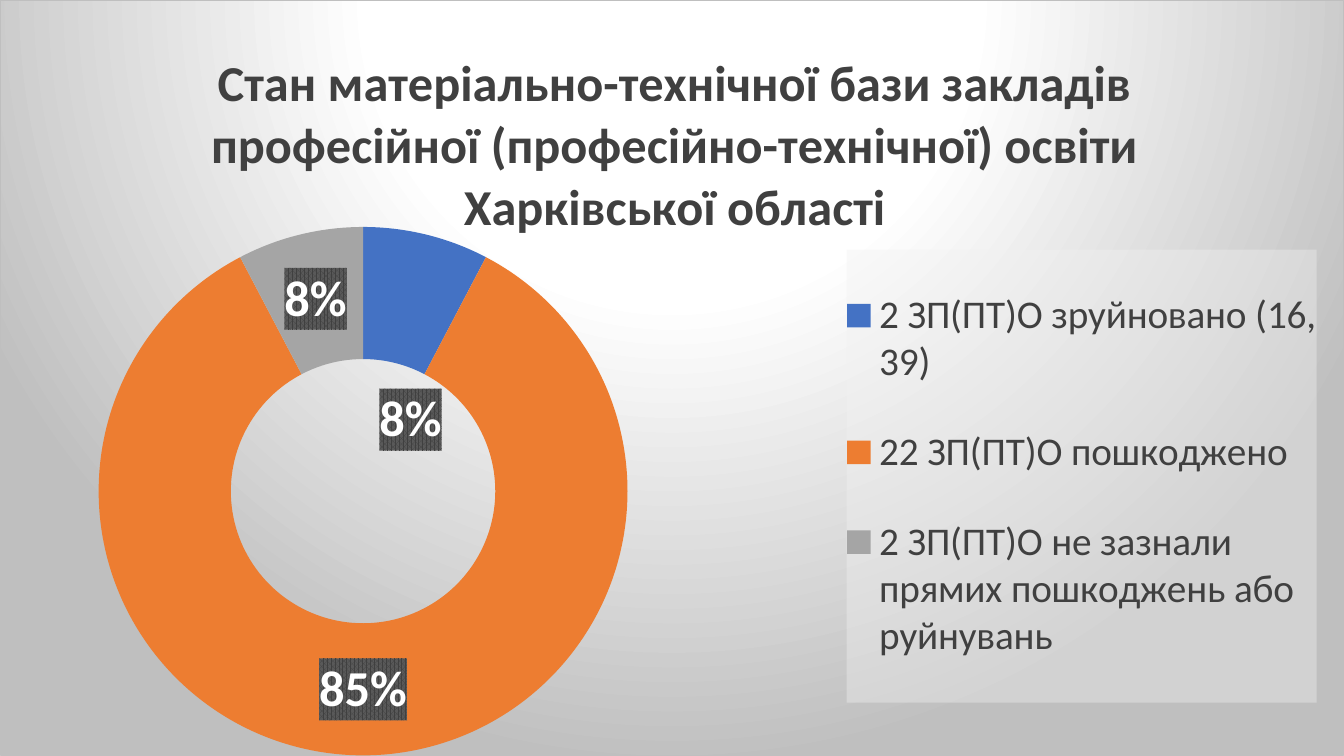
import copy
import pptx
import pptx.util
import pptx.chart.data
import pptx.dml.color
import pptx.enum.chart
import pptx.oxml
import pptx.oxml.ns

RGB = pptx.dml.color.RGBColor
DARK = RGB(0x40, 0x40, 0x40)
SLATE = RGB(0x59, 0x59, 0x59)
WHITE = RGB(0xFF, 0xFF, 0xFF)
PALE = RGB(0xF2, 0xF2, 0xF2)
GREY = RGB(0xBF, 0xBF, 0xBF)
BLUE = RGB(0x44, 0x72, 0xC4)
RUST = RGB(0xED, 0x7D, 0x31)
ASH = RGB(0xA5, 0xA5, 0xA5)

WIDE, HIGH = pptx.util.Inches(13.33), pptx.util.Inches(7.5)
HEAD = ("Стан матеріально-технічної бази закладів професійної "
        "(професійно-технічної) освіти Харківської області")
PARTS = [
    ("2 ЗП(ПТ)О зруйновано (16, 39)", 2, BLUE),
    ("22 ЗП(ПТ)О пошкоджено", 22, RUST),
    ("2 ЗП(ПТ)О не зазнали прямих пошкоджень або руйнувань", 2, ASH),
]


def node(tag, body):
    spaces = pptx.oxml.ns.nsdecls("c", "a")
    return pptx.oxml.parse_xml(f"<c:{tag} {spaces}>{body}</c:{tag}>")


def tint(color, extra=""):
    return f'<a:srgbClr val="{color}">{extra}</a:srgbClr>'


def style(font, size, color, bold=False):
    font.name = "Calibri"
    font.size = pptx.util.Pt(size)
    font.bold = bold
    font.color.rgb = color


def write(frame, text, **form):
    frame.text = text
    style(frame.paragraphs[0].runs[0].font, **form)


def layout(x, y, w=None, h=None, edge=True, inner=False):
    body = '<c:layoutTarget val="inner"/>' if inner else ""
    if edge:
        body += '<c:xMode val="edge"/><c:yMode val="edge"/>'
    for key, share in zip("xywh", (x, y, w, h)):
        if share is not None:
            body += f'<c:{key} val="{share}"/>'
    return node("layout", f"<c:manualLayout>{body}</c:manualLayout>")


def place(owner, index, spot):
    for old in owner.findall(pptx.oxml.ns.qn("c:layout")):
        owner.remove(old)
    owner.insert(index, spot)


def back(chart):
    stops = "".join(f'<a:gs pos="{pos * 1000}">{tint(color)}</a:gs>'
                    for pos, color in ((0, WHITE), (39, WHITE), (100, GREY)))
    fill = (f'<a:gradFill><a:gsLst>{stops}</a:gsLst><a:path path="circle">'
            '<a:fillToRect l="50000" t="-80000" r="50000" b="180000"/>'
            '</a:path></a:gradFill>')
    line = f'<a:ln w="9525"><a:solidFill>{tint(GREY)}</a:solidFill></a:ln>'
    chart.element.xpath("c:chart")[0].addnext(node("spPr", fill + line))


def title(chart):
    chart.has_title = True
    write(chart.chart_title.text_frame, HEAD, size=36, color=DARK, bold=True)
    place(chart.element.xpath("c:chart/c:title")[0], 1, layout(0.15, 0.05))


def legend(chart):
    chart.has_legend = True
    key = chart.legend
    key.position = pptx.enum.chart.XL_LEGEND_POSITION.RIGHT
    key.include_in_layout = False
    style(key.font, 28, DARK)
    root = chart.element.xpath("c:chart/c:legend")[0]
    place(root, 1, layout(0.63, 0.33, 0.35, 0.6))
    pale = tint(PALE, '<a:alpha val="39000"/>')
    root.xpath("c:overlay")[0].addnext(
        node("spPr", f"<a:solidFill>{pale}</a:solidFill>"))


def labels(chart, series):
    marks = series.data_labels
    marks.show_percentage = True
    marks.show_value = False
    marks.number_format = "0%"
    marks.number_format_is_linked = False
    style(marks.font, 36, WHITE, bold=True)
    root = chart.element.xpath(".//c:ser/c:dLbls")[0]
    text = root.xpath("c:txPr")[0]
    text.addprevious(node("spPr", (
        f'<a:pattFill prst="pct75"><a:fgClr>{tint(DARK)}</a:fgClr>'
        f'<a:bgClr>{tint(SLATE)}</a:bgClr></a:pattFill>')))
    shows = "".join(
        f'<c:show{name} val="{int(name == "Percent")}"/>'
        for name in ("LegendKey", "Val", "CatName", "SerName", "Percent",
                     "BubbleSize"))
    moved = node("dLbl", '<c:idx val="0"/>' + shows)
    look = [copy.deepcopy(root.xpath(f"c:{tag}")[0])
            for tag in ("numFmt", "spPr", "txPr")]
    for rank, part in enumerate([layout(0, 0.16, edge=False)] + look, 1):
        moved.insert(rank, part)
    root.insert(0, moved)


def ring(chart):
    place(chart.element.xpath("c:chart/c:plotArea")[0], 0,
          layout(0.04, 0.3, 0.46, 0.7, inner=True))
    plot = chart.plots[0]
    plot.vary_by_categories = True
    series = plot.series[0]
    for rank, (name, count, color) in enumerate(PARTS):
        form = series.points[rank].format
        form.fill.solid()
        form.fill.fore_color.rgb = color
        form.line.fill.background()
    labels(chart, series)


def state(slide, left, top, width, height):
    data = pptx.chart.data.CategoryChartData()
    data.categories = [name for name, count, color in PARTS]
    data.add_series("Series 1", [count for name, count, color in PARTS])
    kind = pptx.enum.chart.XL_CHART_TYPE.DOUGHNUT
    chart = slide.shapes.add_chart(kind, left, top, width, height, data).chart
    style(chart.font, 10, RGB(0, 0, 0))
    back(chart)
    title(chart)
    legend(chart)
    ring(chart)


def main():
    deck = pptx.Presentation()
    deck.slide_width, deck.slide_height = WIDE, HIGH
    slide = deck.slides.add_slide(deck.slide_layouts[6])
    state(slide, 0, 0, WIDE, HIGH)
    deck.save("out.pptx")


if __name__ == "__main__":
    main()
